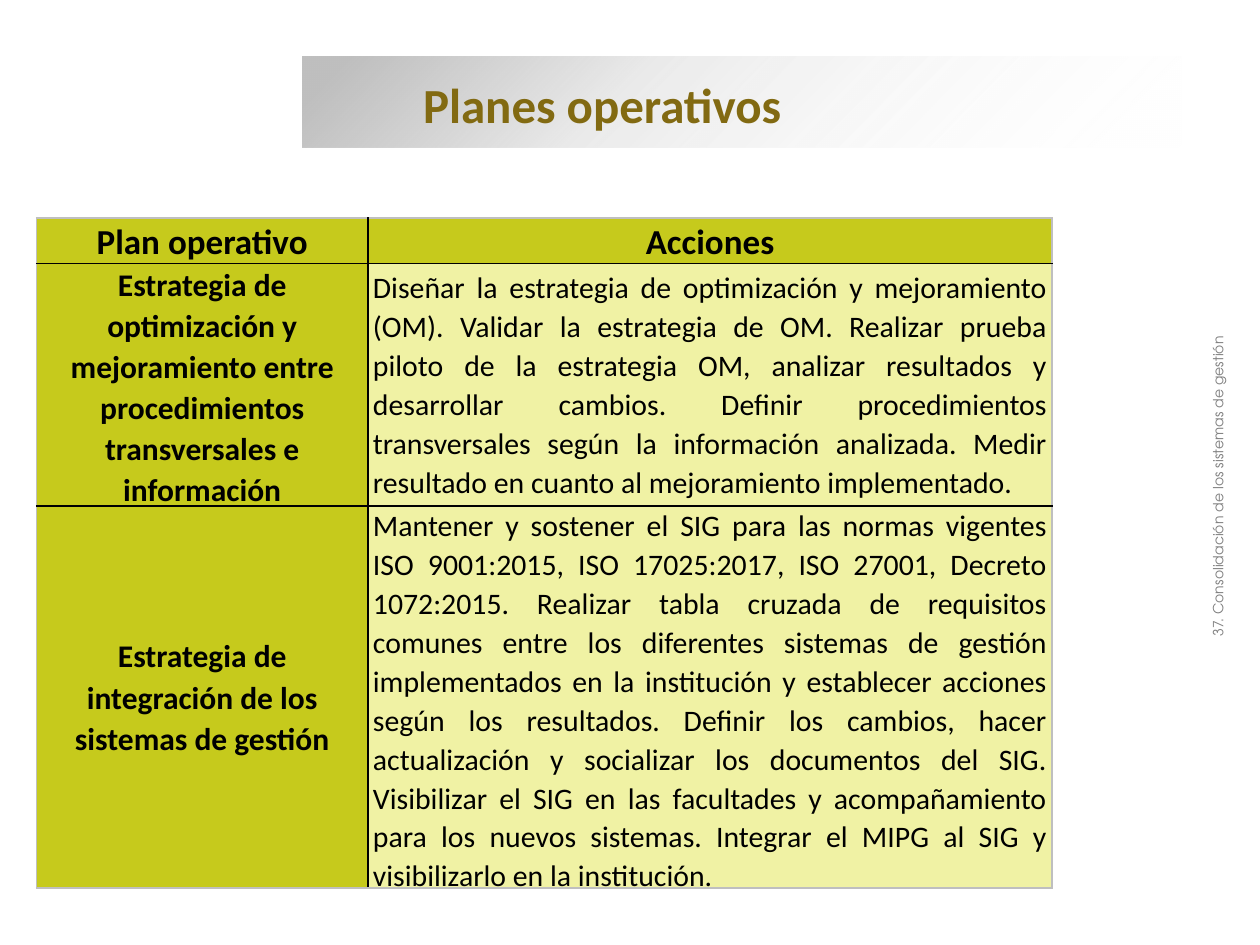
from lxml import etree
from pptx import Presentation
from pptx.dml.color import RGBColor
from pptx.enum.shapes import MSO_SHAPE
from pptx.enum.text import MSO_ANCHOR, PP_ALIGN
from pptx.oxml import parse_xml
from pptx.oxml.ns import nsdecls, qn
from pptx.util import Inches, Pt

RECTANGLE = MSO_SHAPE.RECTANGLE
MIDDLE, TOP = MSO_ANCHOR.MIDDLE, MSO_ANCHOR.TOP
LEFT, CENTER, JUSTIFY = PP_ALIGN.LEFT, PP_ALIGN.CENTER, PP_ALIGN.JUSTIFY

BLACK = RGBColor(0x00, 0x00, 0x00)
WHITE = RGBColor(0xFF, 0xFF, 0xFF)
SILVER = RGBColor(0xBF, 0xBF, 0xBF)
GRAY = RGBColor(0x80, 0x80, 0x80)
BRONZE = RGBColor(0x82, 0x6A, 0x12)
LIME = RGBColor(0xC6, 0xCA, 0x1C)
PALE_LIME = RGBColor(0xF0, 0xF2, 0xA4)

SLIDE_WIDTH, SLIDE_HEIGHT = Inches(10), Inches(7.5)
GRID_COLUMNS = 100
UNIT = SLIDE_WIDTH / GRID_COLUMNS

TITLE_FONT = {"name": "Calibri", "size": Pt(28), "bold": True}
HEADER_FONT = {"name": "Calibri", "size": Pt(20), "bold": True}
PLAN_FONT = {"name": "Calibri", "size": Pt(18), "bold": True}
ACTION_FONT = {"name": "Calibri", "size": Pt(17), "bold": False}
SECTION_FONT = {"name": "TeX Gyre Adventor", "size": Pt(8)}

BAND_STOPS = [(5, SILVER, 100), (37, SILVER, 31), (100, WHITE, 0)]
PLAN_COLUMNS = [26.3, 54.3]
PLAN_ROWS = [3.6, 19.2, 30.2]
PLANS = [
    ("Plan operativo", "Acciones"),
    (
        "Estrategia de optimización y mejoramiento entre procedimientos "
        "transversales e información",
        "Diseñar la estrategia de optimización y mejoramiento (OM). Validar la "
        "estrategia de OM. Realizar prueba piloto de la estrategia OM, analizar "
        "resultados y desarrollar cambios. Definir procedimientos transversales "
        "según la información analizada. Medir resultado en cuanto al "
        "mejoramiento implementado.",
    ),
    (
        "Estrategia de integración de los sistemas de gestión",
        "Mantener y sostener el SIG para las normas vigentes ISO 9001:2015, ISO "
        "17025:2017, ISO 27001, Decreto 1072:2015. Realizar tabla cruzada de "
        "requisitos comunes entre los diferentes sistemas de gestión "
        "implementados en la institución y establecer acciones según los "
        "resultados. Definir los cambios, hacer actualización y socializar los "
        "documentos del SIG. Visibilizar el SIG en las facultades y "
        "acompañamiento para los nuevos sistemas. Integrar el MIPG al SIG y "
        "visibilizarlo en la institución.",
    ),
]


def grid(*units):
    return [round(unit * UNIT) for unit in units]


def apply_format(target, values):
    for attribute, value in values.items():
        setattr(target, attribute, value)


def write_paragraph(frame, text, font, color, layout):
    paragraph = frame.paragraphs[0]
    apply_format(paragraph, layout)
    words = paragraph.add_run()
    words.text = text
    apply_format(words.font, font)
    words.font.color.rgb = color


def add_label(slide, place, text, font, color, layout, anchor, rotation=0):
    label = slide.shapes.add_textbox(*grid(*place))
    label.rotation = rotation
    apply_format(label.text_frame, {"word_wrap": True, "vertical_anchor": anchor})
    write_paragraph(label.text_frame, text, font, color, layout)


def add_fading_band(slide, place, stops, angle):
    band = slide.shapes.add_shape(RECTANGLE, *grid(*place))
    band.shadow.inherit = False
    band.line.fill.background()
    band.fill.gradient()
    gradient = band.fill._xPr.find(qn("a:gradFill"))
    stop_xml = "".join(
        f'<a:gs pos="{position * 1000}"><a:srgbClr val="{color}">'
        f'<a:alpha val="{opacity * 1000}"/></a:srgbClr></a:gs>'
        for position, color, opacity in stops
    )
    fading = parse_xml(
        f'<a:gradFill {nsdecls("a")} rotWithShape="1"><a:gsLst>{stop_xml}</a:gsLst>'
        f'<a:lin ang="{angle * 60000}" scaled="0"/></a:gradFill>'
    )
    gradient.getparent().replace(gradient, fading)


def set_borders(cell, colors):
    properties = cell._tc.get_or_add_tcPr()
    for index, (side, color) in enumerate(colors.items()):
        border = etree.Element(qn(f"a:{side}"), w=str(Pt(1)))
        solid = etree.SubElement(border, qn("a:solidFill"))
        etree.SubElement(solid, qn("a:srgbClr"), val=str(color))
        properties.insert(index, border)


def add_plan_table(slide, left, top):
    place = grid(left, top, sum(PLAN_COLUMNS), sum(PLAN_ROWS))
    table = slide.shapes.add_table(len(PLAN_ROWS), len(PLAN_COLUMNS), *place).table
    for column, width in zip(table.columns, grid(*PLAN_COLUMNS)):
        column.width = width
    for row, height in zip(table.rows, grid(*PLAN_ROWS)):
        row.height = height
    last_row, last_column = len(PLAN_ROWS) - 1, len(PLAN_COLUMNS) - 1
    margin = grid(0.4)[0]
    for r, plan in enumerate(PLANS):
        for c, text in enumerate(plan):
            cell = table.cell(r, c)
            is_action = r > 0 and c > 0
            apply_format(cell, {
                "margin_left": margin, "margin_right": margin,
                "margin_top": 0, "margin_bottom": 0, "vertical_anchor": MIDDLE,
            })
            cell.fill.solid()
            cell.fill.fore_color.rgb = PALE_LIME if is_action else LIME
            font = HEADER_FONT if r == 0 else ACTION_FONT if is_action else PLAN_FONT
            layout = {"alignment": JUSTIFY if is_action else CENTER, "line_spacing": 1.07}
            write_paragraph(cell.text_frame, text, font, BLACK, layout)
            set_borders(cell, {
                "lnL": SILVER if c == 0 else BLACK,
                "lnR": SILVER if c == last_column else BLACK,
                "lnT": SILVER if r == 0 else BLACK,
                "lnB": SILVER if r == last_row else BLACK,
            })


def main():
    presentation = Presentation()
    apply_format(presentation, {"slide_width": SLIDE_WIDTH, "slide_height": SLIDE_HEIGHT})
    slide = presentation.slides.add_slide(presentation.slide_layouts[6])
    add_fading_band(slide, (24, 4.5, 69.8, 7.2), BAND_STOPS, 45)
    add_label(slide, (32.6, 5.4, 62, 5.7), "Planes operativos",
              TITLE_FONT, BRONZE, {"alignment": LEFT}, MIDDLE)
    add_plan_table(slide, 2.9, 17.3)
    add_label(slide, (72.5, 37.4, 48.4, 2.4), "37. Consolidación de los sistemas de gestión",
              SECTION_FONT, GRAY, {"alignment": CENTER}, TOP, rotation=270)
    presentation.save("out.pptx")


if __name__ == "__main__":
    main()
